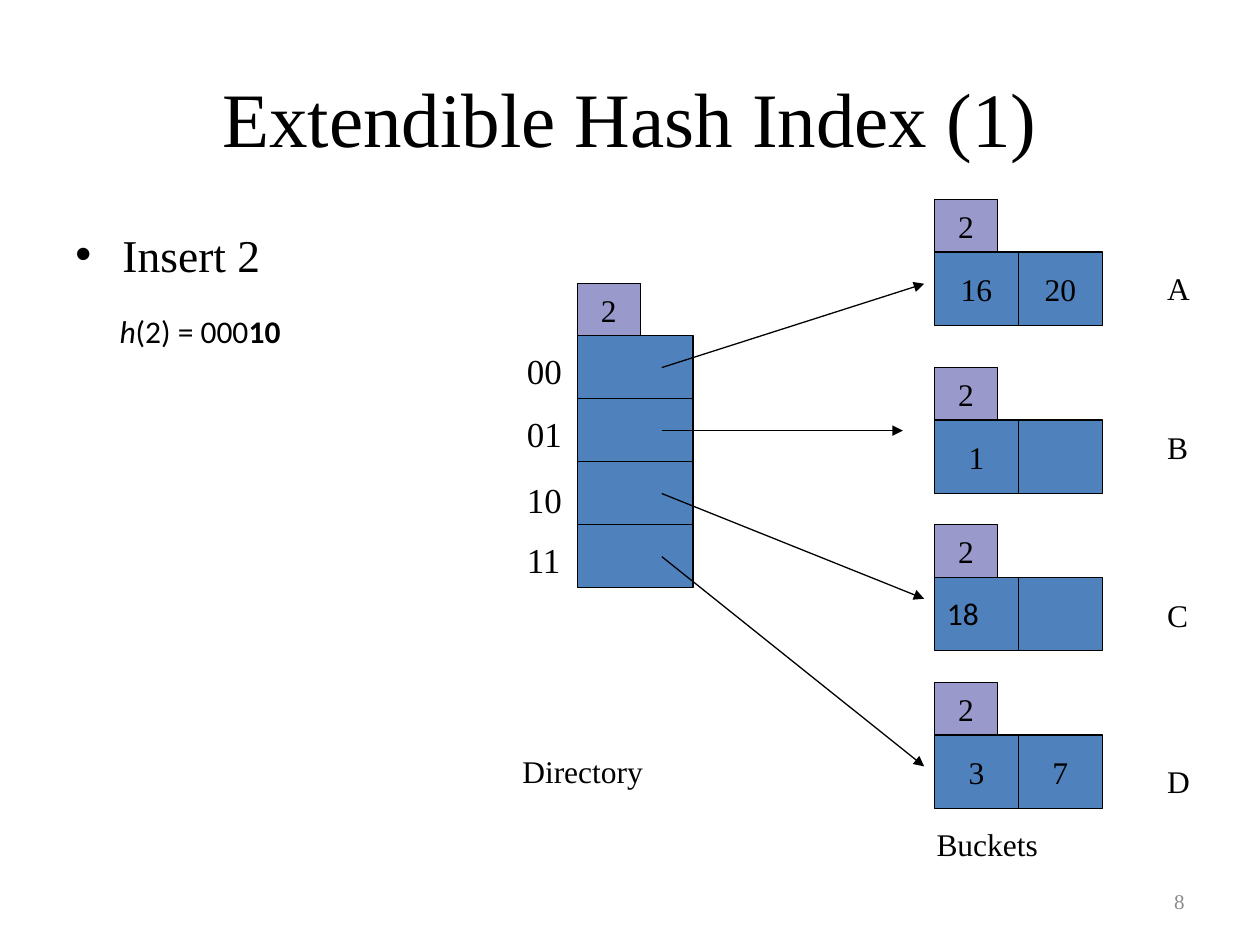
from typing import NamedTuple, Optional

from lxml import etree
from pptx import Presentation
from pptx import util as u
from pptx.dml.color import RGBColor
from pptx.enum import shapes, text
from pptx.oxml.ns import qn

COLOURS = {"ink": "000000", "cell": "4F81BD", "depth": "9999CC", "number": "8C8C8C"}
SERIF = "Times New Roman"
SANS = "Calibri"
LEFT, CENTER, RIGHT = text.PP_ALIGN.LEFT, text.PP_ALIGN.CENTER, text.PP_ALIGN.RIGHT

DEPTH_WIDTH, DEPTH_HEIGHT = 1.27, 1.06
ENTRY_WIDTH, ENTRY_HEIGHT = 2.33, 1.27
SLOT_WIDTH, SLOT_HEIGHT = 1.69, 1.48
DIRECTORY_LEFT, DIRECTORY_TOP = 11.64, 5.71
BUCKET_LEFT = 18.84
POINTER_LEFT = 13.34


class Run(NamedTuple):
    words: str
    size: float = 18
    font: str = SERIF
    colour: str = "ink"
    bold: bool = False
    italic: bool = False


class Box(NamedTuple):
    left: float
    top: float
    width: float
    height: float

    def lengths(self) -> list[u.Length]:
        return [u.Cm(value) for value in self]


class Entry(NamedTuple):
    bits: str
    bits_top: float
    target_x: float
    target_y: float


class Bucket(NamedTuple):
    name: str
    top: float
    name_top: float
    keys: tuple[Optional[str], Optional[str]]


ENTRIES = [
    Entry("00", 6.93, 18.63, 5.72),
    Entry("01", 8.2, 18.2, 8.68),
    Entry("10", 9.53, 18.63, 12.07),
    Entry("11", 10.74, 18.63, 15.45),
]
BUCKETS = [
    Bucket("A", 4.02, 5.29, ("16", "20")),
    Bucket("B", 7.41, 8.51, ("1", None)),
    Bucket("C", 10.58, 11.89, (None, None)),
    Bucket("D", 13.76, 15.24, ("3", "7")),
]


def rgb(name: str) -> RGBColor:
    return RGBColor.from_string(COLOURS[name])


def write(frame, runs: list[Run], align=LEFT, middle: bool = False, wrap: bool = False):
    frame.word_wrap = wrap
    frame.vertical_anchor = text.MSO_ANCHOR.MIDDLE if middle else text.MSO_ANCHOR.TOP
    paragraph = frame.paragraphs[0]
    paragraph.alignment = align
    for part in runs:
        run = paragraph.add_run()
        run.text = part.words
        run.font.size = u.Pt(part.size)
        run.font.name = part.font
        run.font.bold = part.bold
        run.font.italic = part.italic
        run.font.color.rgb = rgb(part.colour)
    return paragraph


def add_label(slide, box: Box, runs: list[Run], **layout):
    label = slide.shapes.add_textbox(*box.lengths())
    return write(label.text_frame, runs, **layout)


def add_cell(slide, box: Box, fill: str, words: Optional[str] = None) -> None:
    cell = slide.shapes.add_shape(shapes.MSO_SHAPE.RECTANGLE, *box.lengths())
    cell.shadow.inherit = False
    cell.fill.solid()
    cell.fill.fore_color.rgb = rgb(fill)
    cell.line.color.rgb = rgb("ink")
    cell.line.width = u.Pt(0.75)
    if words:
        write(cell.text_frame, [Run(words)], align=CENTER, middle=True)


def add_depth(slide, left: float, top: float) -> None:
    add_cell(slide, Box(left, top, DEPTH_WIDTH, DEPTH_HEIGHT), "depth", "2")


def add_pointer(slide, start_y: float, end_x: float, end_y: float) -> None:
    ends = [u.Cm(value) for value in (POINTER_LEFT, start_y, end_x, end_y)]
    pointer = slide.shapes.add_connector(shapes.MSO_CONNECTOR.STRAIGHT, *ends)
    pointer.line.color.rgb = rgb("ink")
    pointer.line.width = u.Pt(0.75)
    properties = pointer.element.spPr
    etree.SubElement(properties.find(qn("a:ln")), qn("a:tailEnd"), type="triangle")
    etree.SubElement(properties, qn("a:effectLst"))


def add_bullet(paragraph) -> None:
    paragraph.space_before = u.Pt(3)
    properties = paragraph._p.get_or_add_pPr()
    properties.set("marL", str(u.Cm(0.95)))
    properties.set("indent", str(-u.Cm(0.95)))
    etree.SubElement(properties, qn("a:buFont"), typeface="Arial")
    etree.SubElement(properties, qn("a:buChar"), char="•")


def add_directory(slide) -> None:
    first_top = DIRECTORY_TOP + DEPTH_HEIGHT
    for row, entry in enumerate(ENTRIES):
        top = first_top + row * ENTRY_HEIGHT
        add_cell(slide, Box(DIRECTORY_LEFT, top, ENTRY_WIDTH, ENTRY_HEIGHT), "cell")
        add_label(slide, Box(10.37, entry.bits_top, 1.22, 1.11), [Run(entry.bits, 20)])
    add_depth(slide, DIRECTORY_LEFT, DIRECTORY_TOP)
    add_label(slide, Box(10.28, 15.03, 2.97, 1.03), [Run("Directory")])


def add_bucket(slide, bucket: Bucket) -> None:
    for column, key in enumerate(bucket.keys):
        left = BUCKET_LEFT + column * SLOT_WIDTH
        top = bucket.top + DEPTH_HEIGHT
        add_cell(slide, Box(left, top, SLOT_WIDTH, SLOT_HEIGHT), "cell", key)
    add_depth(slide, BUCKET_LEFT, bucket.top)
    add_label(slide, Box(23.28, bucket.name_top, 0.97, 1.03), [Run(bucket.name)])


def main() -> None:
    deck = Presentation()
    deck.slide_width, deck.slide_height = u.Cm(25.4), u.Cm(19.05)
    slide = deck.slides.add_slide(deck.slide_layouts[6])

    add_label(slide, Box(1.27, 0.76, 22.86, 3.18), [Run("Extendible Hash Index (1)", 44)],
              align=CENTER, middle=True, wrap=True)
    add_bullet(add_label(slide, Box(1.27, 4.45, 22.86, 12.57), [Run("Insert 2", 26)],
                         align=text.PP_ALIGN.JUSTIFY, wrap=True))
    add_label(slide, Box(18.2, 17.66, 5.93, 1.01), [Run("8", 12, colour="number")],
              align=RIGHT, middle=True, wrap=True)
    hash_runs = [Run("h", font=SANS, italic=True), Run("(2) = 000", font=SANS),
                 Run("10", font=SANS, bold=True)]
    add_label(slide, Box(2.16, 6.17, 6.07, 1.03), hash_runs, wrap=True)

    add_directory(slide)
    for bucket in BUCKETS:
        add_bucket(slide, bucket)
    for row, entry in enumerate(ENTRIES):
        add_pointer(slide, 7.41 + row * ENTRY_HEIGHT, entry.target_x, entry.target_y)
    add_label(slide, Box(18.63, 16.51, 2.59, 1.03), [Run("Buckets")])
    add_label(slide, Box(BUCKET_LEFT, 11.85, 1.45, 1.27), [Run("18", font=SANS)])

    deck.save("out.pptx")


if __name__ == "__main__":
    main()
